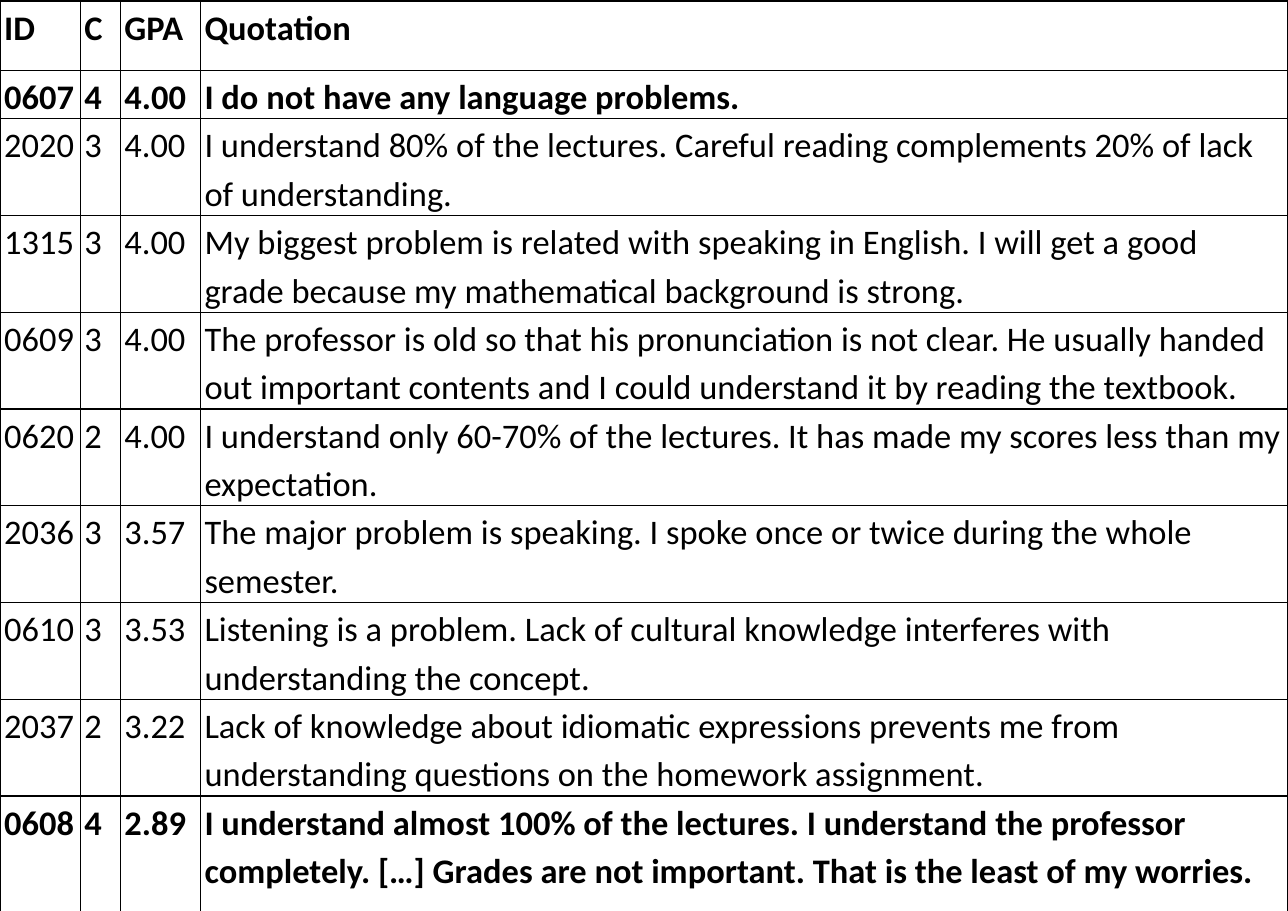
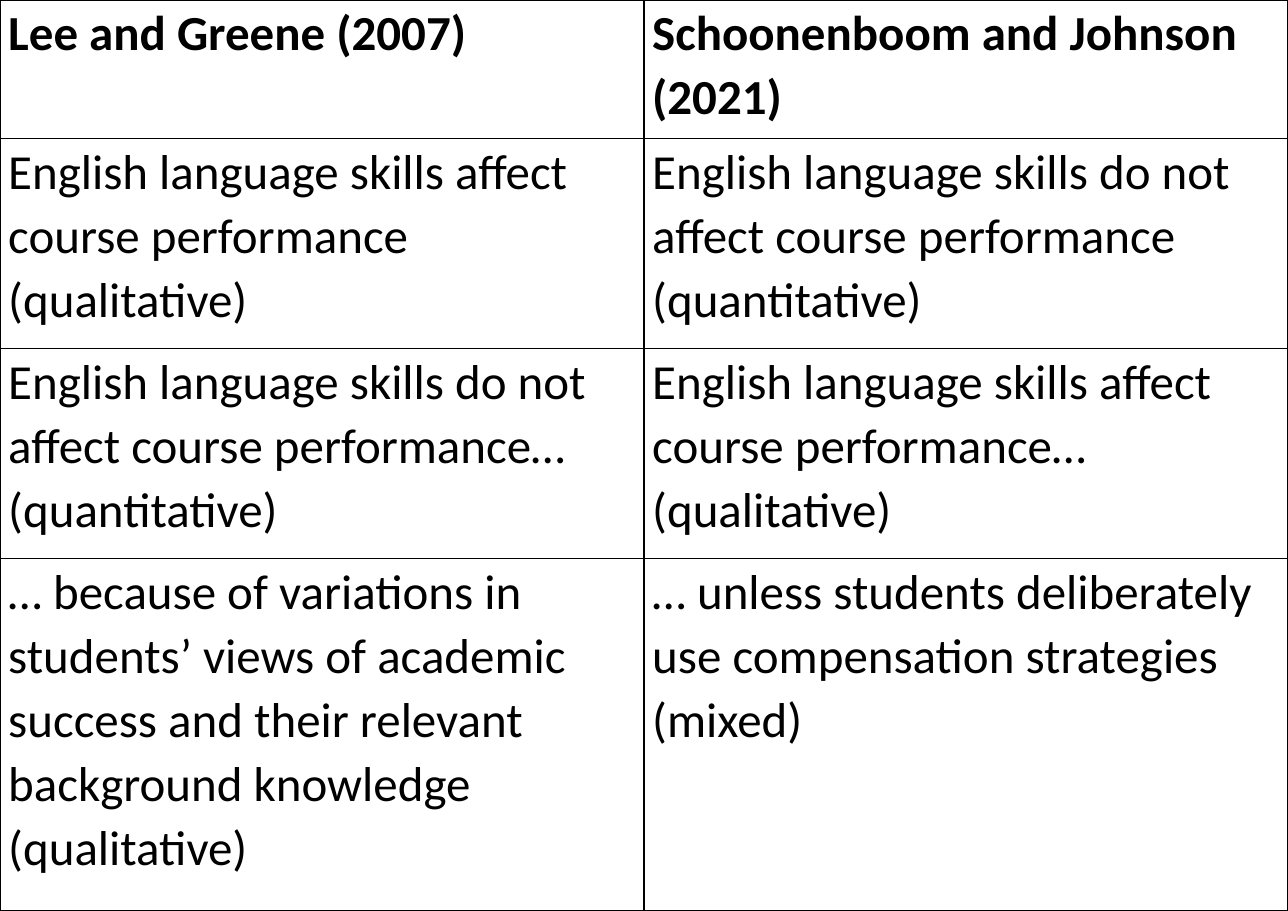
from lxml import etree
from pptx import Presentation
from pptx.dml.color import RGBColor
from pptx.oxml import ns
from pptx.util import Pt

BLACK = RGBColor(0, 0, 0)
WHITE = RGBColor(255, 255, 255)
FONT = "Calibri"
WIDTH, HEIGHT = 841.68, 595.44

QUOTES = [
    ("ID", "C", "GPA", "Quotation"),
    ("0607", "4", "4.00", "I do not have any language problems."),
    ("2020", "3", "4.00", "I understand 80% of the lectures. Careful reading "
     "complements 20% of lack of understanding."),
    ("1315", "3", "4.00", "My biggest problem is related with speaking in English. "
     "I will get a good grade because my mathematical background is strong."),
    ("0609", "3", "4.00", "The professor is old so that his pronunciation is not clear. "
     "He usually handed out important contents and I could understand it by "
     "reading the textbook."),
    ("0620", "2", "4.00", "I understand only 60-70% of the lectures. "
     "It has made my scores less than my expectation."),
    ("2036", "3", "3.57", "The major problem is speaking. "
     "I spoke once or twice during the whole semester."),
    ("0610", "3", "3.53", "Listening is a problem. Lack of cultural knowledge "
     "interferes with understanding the concept."),
    ("2037", "2", "3.22", "Lack of knowledge about idiomatic expressions prevents me "
     "from understanding questions on the homework assignment."),
    ("0608", "4", "2.89", "I understand almost 100% of the lectures. I understand the "
     "professor completely. […] Grades are not important. "
     "That is the least of my worries."),
]

CLAIMS = [
    ("Lee and Greene (2007)", "Schoonenboom and Johnson (2021)"),
    ("English language skills affect course performance (qualitative)",
     "English language skills do not affect course performance (quantitative)"),
    ("English language skills do not affect course performance… (quantitative)",
     "English language skills affect course performance… (qualitative)"),
    ("… because of variations in students’ views of academic success and their "
     "relevant background knowledge (qualitative)",
     "… unless students deliberately use compensation strategies (mixed)"),
]


class Deck:
    def __init__(self):
        self.prs = Presentation()
        self.prs.slide_width, self.prs.slide_height = Pt(WIDTH), Pt(HEIGHT)
        self.slide = None

    def page(self):
        self.slide = self.prs.slides.add_slide(self.prs.slide_layouts[6])
        fill = self.slide.background.fill
        fill.solid()
        fill.fore_color.rgb = WHITE

    def border(self, cell):
        props = cell._tc.get_or_add_tcPr()
        for side in "LRTB":
            line = etree.SubElement(props, ns.qn(f"a:ln{side}"), w=str(Pt(1)))
            fill = etree.SubElement(line, ns.qn("a:solidFill"))
            etree.SubElement(fill, ns.qn("a:srgbClr"), val=str(BLACK))

    def cell(self, cell, words, size, bold, inset, lead, after):
        self.border(cell)
        cell.fill.solid()
        cell.fill.fore_color.rgb = WHITE
        cell.margin_left = cell.margin_right = Pt(inset)
        cell.margin_top = cell.margin_bottom = 0
        para = cell.text_frame.paragraphs[0]
        para.line_spacing, para.space_after = lead, Pt(after)
        run = para.add_run()
        run.text = words
        font = run.font
        font.name, font.size, font.bold = FONT, Pt(size), bold
        font.color.rgb = BLACK

    def table(self, top, cols, rows, data, strong, size, inset, lead, after=0):
        frame = self.slide.shapes.add_table(
            len(rows), len(cols), 0, Pt(top), Pt(sum(cols)), Pt(sum(rows)))
        grid = frame.table
        grid.first_row = grid.horz_banding = False
        for col, width in zip(grid.columns, cols):
            col.width = Pt(width)
        for r, (row, height) in enumerate(zip(grid.rows, rows)):
            row.height = Pt(height)
            for cell, words in zip(row.cells, data[r]):
                self.cell(cell, words, size, r in strong, inset, lead, after)


def main():
    deck = Deck()
    deck.page()
    slim = [52.4, 26.2, 52.4]
    deck.table(0.6, slim + [WIDTH - sum(slim)], [45.4, 29.5] + [61.2] * 7 + [86.4],
               QUOTES, {0, 1, len(QUOTES) - 1}, 22.5, 2.7, 1.15)
    deck.page()
    rows = [90.6, 137.3, 137.3]
    deck.table(0, [WIDTH / 2] * 2, rows + [HEIGHT - sum(rows)],
               CLAIMS, {0}, 32, 5.4, 1.07, 8)
    deck.prs.save("out.pptx")


if __name__ == "__main__":
    main()
